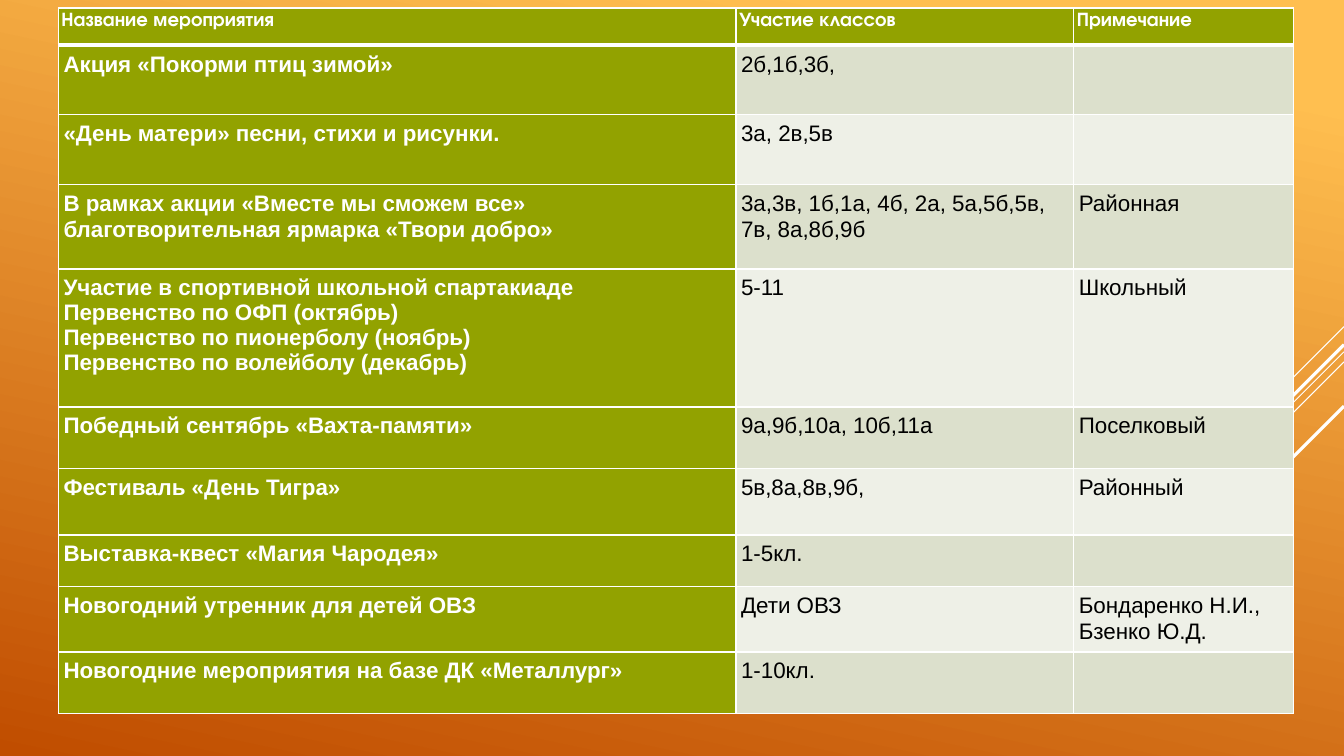
from lxml import etree
from pptx import Presentation
from pptx.dml.color import RGBColor
from pptx.enum.shapes import MSO_CONNECTOR
from pptx.oxml.ns import qn
from pptx.util import Inches, Pt

STRAIGHT = MSO_CONNECTOR.STRAIGHT
WIDE, HIGH = 13.33, 7.5
WHITE, BLACK, OLIVE = "FFFFFF", "000000", "92A200"
BANDS = ("DCE0CC", "EEF0E7")
COLS = (6.72, 3.35, 2.18)
# Height of each row, then its cells; a line break starts a paragraph.
ROWS = (
    (0.37, "Название мероприятия", "Участие классов", "Примечание"),
    (0.69, "Акция «Покорми птиц зимой»", "2б,1б,3б,", ""),
    (0.69, "«День матери» песни, стихи и рисунки.", "3а, 2в,5в", ""),
    (0.84, "В рамках акции «Вместе мы сможем все» "
     "благотворительная ярмарка «Твори добро»",
     "3а,3в, 1б,1а, 4б, 2а, 5а,5б,5в, 7в, 8а,8б,9б", "Районная"),
    (1.37, "Участие в спортивной школьной спартакиаде\n"
     "Первенство по ОФП (октябрь)\n"
     "Первенство по пионерболу (ноябрь)\n"
     "Первенство по волейболу (декабрь)", "5-11", "Школьный"),
    (0.61, "Победный сентябрь «Вахта-памяти»", "9а,9б,10а, 10б,11а",
     "Поселковый"),
    (0.66, "Фестиваль «День Тигра»", "5в,8а,8в,9б,", "Районный"),
    (0.51, "Выставка-квест «Магия Чародея»", "1-5кл.", ""),
    (0.65, "Новогодний утренник для детей ОВЗ", "Дети ОВЗ",
     "Бондаренко Н.И., Бзенко Ю.Д."),
    (0.61, "Новогодние мероприятия на базе ДК «Металлург»", "1-10кл.", ""),
)
# Start height at the right edge, run down to the left, line width.
RAYS = ((3.24, 1, 0.75), (3.49, 3.26, 0.75), (3.59, 2.07, 0.75),
        (3.42, 1.91, 2.25), (4.03, 1.39, 2.25))


def rgb(code):
    return RGBColor.from_string(code)


def paint_back(slide):
    fill = slide.background.fill
    fill.gradient()
    fill.gradient_angle = 360 - 102
    stops = zip(fill.gradient_stops, (0.1, 1), ("FFBF50", "C04D00"))
    for stop, place, code in stops:
        stop.position = place
        stop.color.rgb = rgb(code)


def add_ray(slide, top, run, width):
    """Draw a line at 45 degrees down from the right edge."""
    ray = slide.shapes.add_connector(
        STRAIGHT, Inches(WIDE), Inches(top),
        Inches(WIDE - run), Inches(top + run))
    ray.line.color.rgb = rgb(WHITE)
    ray.line.width = Pt(width)
    etree.SubElement(ray._element.spPr, qn("a:effectLst"))


def set_edges(cell, top, bottom):
    """Give a cell white borders; top and bottom are widths in points."""
    props = cell._tc.get_or_add_tcPr()
    for side, width in (("L", 1), ("R", 1), ("T", top), ("B", bottom)):
        edge = etree.SubElement(props, qn("a:ln" + side), w=str(Pt(width)))
        fill = etree.SubElement(edge, qn("a:solidFill"))
        etree.SubElement(fill, qn("a:srgbClr"), val=WHITE)


def fill_cell(cell, text, row, col):
    head = row == 0
    dark = head or col == 0
    set_edges(cell, 3 if row == 1 else 1, 3 if head else 1)
    cell.fill.solid()
    cell.fill.fore_color.rgb = rgb(OLIVE if dark else BANDS[(row - 1) % 2])
    inset = Inches(0.03 if head else 0.05)
    cell.margin_left = cell.margin_right = inset
    cell.margin_top = cell.margin_bottom = inset
    cell.text = text
    for i, para in enumerate(cell.text_frame.paragraphs):
        para.line_spacing = 1.0 if i else 1.07
        font = para.font
        font.name = "TeX Gyre Adventor" if head else "Arial"
        font.size = Pt(14 if head else 16)
        font.bold = dark
        font.color.rgb = rgb(WHITE if dark else BLACK)


def add_grid(slide):
    frame = slide.shapes.add_table(
        len(ROWS), len(COLS), Inches(0.58), Inches(0.08),
        Inches(sum(COLS)), Inches(sum(row[0] for row in ROWS)))
    table = frame.table
    table.first_row = table.horz_banding = False
    for col, width in zip(table.columns, COLS):
        col.width = Inches(width)
    for r, (height, *texts) in enumerate(ROWS):
        table.rows[r].height = Inches(height)
        for c, text in enumerate(texts):
            fill_cell(table.cell(r, c), text, r, c)


def main():
    deck = Presentation()
    deck.slide_width, deck.slide_height = Inches(WIDE), Inches(HIGH)
    slide = deck.slides.add_slide(deck.slide_layouts[6])
    paint_back(slide)
    for ray in RAYS:
        add_ray(slide, *ray)
    add_grid(slide)
    deck.save("out.pptx")


if __name__ == "__main__":
    main()
